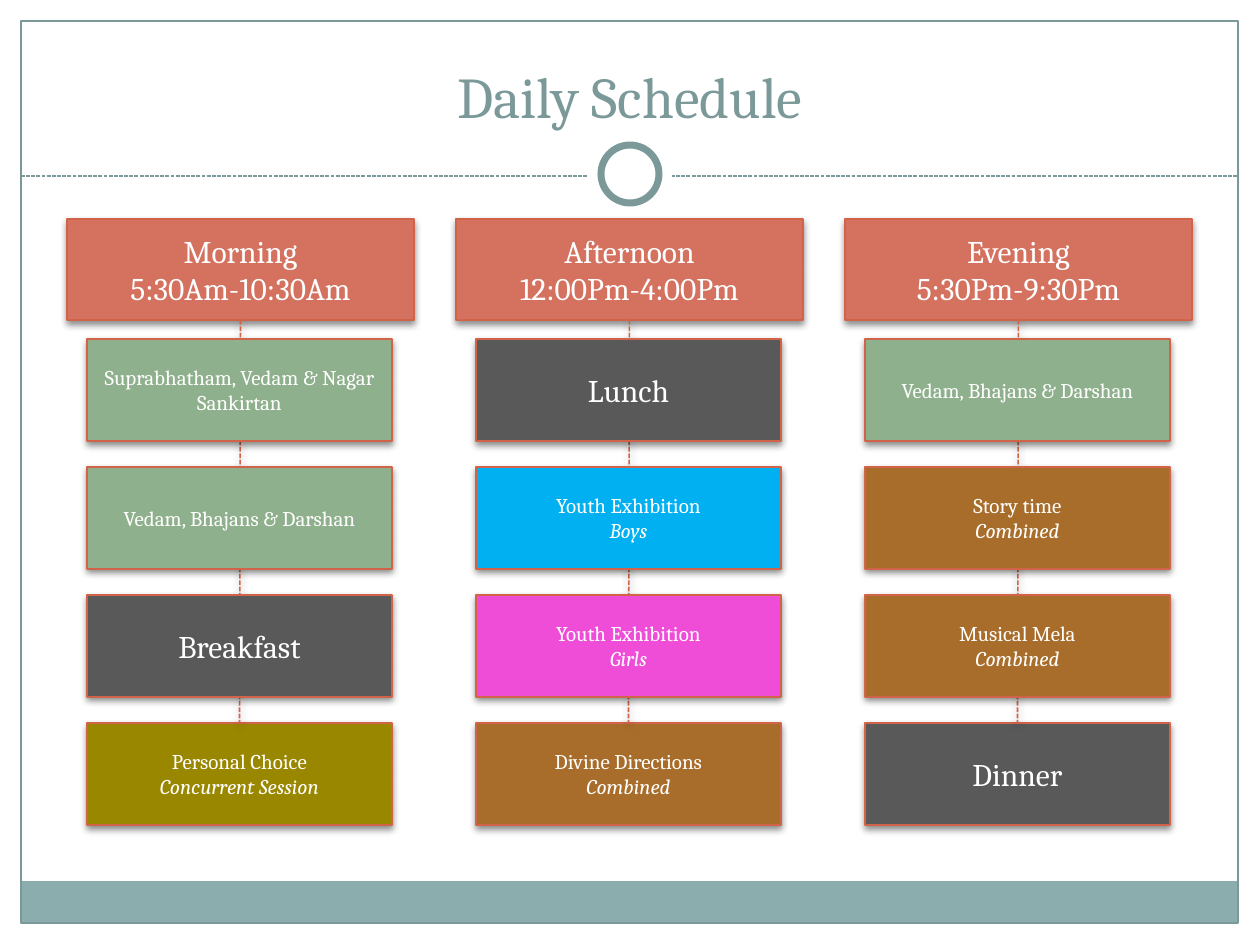
"""Build a three-column daily schedule slide."""
from lxml import etree
from pptx import Presentation, util as u
from pptx.dml.color import RGBColor
from pptx.enum import dml, shapes, text
from pptx.oxml import ns

WHITE = RGBColor(0xFF, 0xFF, 0xFF)
TEAL = RGBColor(0x7C, 0x99, 0x9A)
BAND = RGBColor(0x8C, 0xAD, 0xAE)
RUST = RGBColor(0xD1, 0x63, 0x49)
CORAL = RGBColor(0xD4, 0x72, 0x5F)
GREEN = RGBColor(0x8F, 0xB0, 0x8C)
GREY = RGBColor(0x59, 0x59, 0x59)
BLUE = RGBColor(0x00, 0xB0, 0xF0)
PINK = RGBColor(0xEF, 0x4D, 0xD8)
BROWN = RGBColor(0xA9, 0x6D, 0x2B)
OLIVE = RGBColor(0x99, 0x87, 0x00)

RECT = shapes.MSO_SHAPE.RECTANGLE
OVAL = shapes.MSO_SHAPE.OVAL
MEAL = 18
ITEM = 12

PLAN = [
    ("Morning\n5:30Am-10:30Am", [
        ("Suprabhatham, Vedam & Nagar Sankirtan", GREEN, ITEM),
        ("Vedam, Bhajans & Darshan", GREEN, ITEM),
        ("Breakfast", GREY, MEAL),
        ("Personal Choice\nConcurrent Session", OLIVE, ITEM)]),
    ("Afternoon\n12:00Pm-4:00Pm", [
        ("Lunch", GREY, MEAL),
        ("Youth Exhibition\nBoys", BLUE, ITEM),
        ("Youth Exhibition\nGirls", PINK, ITEM),
        ("Divine Directions\nCombined", BROWN, ITEM)]),
    ("Evening\n5:30Pm-9:30Pm", [
        ("Vedam, Bhajans & Darshan", GREEN, ITEM),
        ("Story time\nCombined", BROWN, ITEM),
        ("Musical Mela\nCombined", BROWN, ITEM),
        ("Dinner", GREY, MEAL)]),
]


def px(num):
    return u.Emu(round(num * 914400 / 126))


class Deck:
    def __init__(self):
        self.font = "Cambria"
        self.prs = Presentation()
        self.prs.slide_width, self.prs.slide_height = px(1260), px(945)
        self.slide = self.prs.slides.add_slide(self.prs.slide_layouts[6])

    def shape(self, kind, x, y, w, h, fill=None, line=None, width=0.75):
        item = self.slide.shapes.add_shape(kind, px(x), px(y), px(w), px(h))
        item.shadow.inherit = False
        if fill is None:
            item.fill.background()
        else:
            item.fill.solid()
            item.fill.fore_color.rgb = fill
        if line is None:
            item.line.fill.background()
        else:
            item.line.color.rgb = line
            item.line.width = u.Pt(width)
        return item

    def shade(self, item, alpha):
        props = item.element.spPr
        group = props.find(ns.qn("a:effectLst"))
        drop = etree.SubElement(group, ns.qn("a:outerShdw"), blurRad=str(u.Pt(4)),
                                dist=str(u.Pt(2)), dir="5400000", rotWithShape="0")
        tint = etree.SubElement(drop, ns.qn("a:srgbClr"), val="000000")
        etree.SubElement(tint, ns.qn("a:alpha"), val=str(alpha * 1000))

    def label(self, item, words, size, color, anchor, slant=False):
        frame = item.text_frame
        frame.text = words
        frame.word_wrap = True
        frame.vertical_anchor = anchor
        for row, para in enumerate(frame.paragraphs):
            para.alignment = text.PP_ALIGN.CENTER
            for run in para.runs:
                run.font.name = self.font
                run.font.size = u.Pt(size)
                run.font.color.rgb = color
                run.font.italic = slant and row > 0

    def title(self, words, x, y, w, h):
        box = self.slide.shapes.add_textbox(px(x), px(y), px(w), px(h))
        self.label(box, words, 33, TEAL, text.MSO_ANCHOR.BOTTOM)

    def card(self, words, x, y, w, h, fill, size, slant=True):
        item = self.shape(RECT, x, y, w, h, fill, RUST)
        self.shade(item, 45)
        self.label(item, words, size, WHITE, text.MSO_ANCHOR.MIDDLE, slant)
        return item

    def line(self, x1, y1, x2, y2, color, width):
        item = self.slide.shapes.add_connector(
            shapes.MSO_CONNECTOR.STRAIGHT, px(x1), px(y1), px(x2), px(y2))
        item.line.color.rgb = color
        item.line.width = u.Pt(width)
        item.line.dash_style = dml.MSO_LINE.SQUARE_DOT
        etree.SubElement(item.element.spPr, ns.qn("a:effectLst"))
        return item

    def link(self, top, end):
        item = self.line(0, 0, 0, 0, RUST, 0.9)
        item.begin_connect(top, 2)
        item.end_connect(end, 0)
        self.shade(item, 35)

    def column(self, x, head, items):
        top = self.card(head, x, 219, 347, 101, CORAL, 18, slant=False)
        spots = [(words, x + 20, 339 + 128 * row, 305, 102, fill, size)
                 for row, (words, fill, size) in enumerate(items)]
        end = self.card(*spots.pop())
        self.link(top, end)
        for spot in spots:
            self.card(*spot)


def main():
    deck = Deck()
    deck.shape(RECT, 21, 881, 1217, 43, BAND)
    deck.shape(RECT, 21, 21, 1217, 902, None, TEAL)
    deck.line(21, 176, 1238, 176, TEAL, 0.75)
    deck.shape(OVAL, 588, 132, 84, 84, WHITE)
    deck.shape(OVAL, 601, 145, 58, 58, WHITE, TEAL, 4)
    deck.title("Daily Schedule", 42, 32, 1176, 104)
    for col, (head, items) in enumerate(PLAN):
        deck.column(67 + 389 * col, head, items)
    deck.prs.save("out.pptx")


if __name__ == "__main__":
    main()
